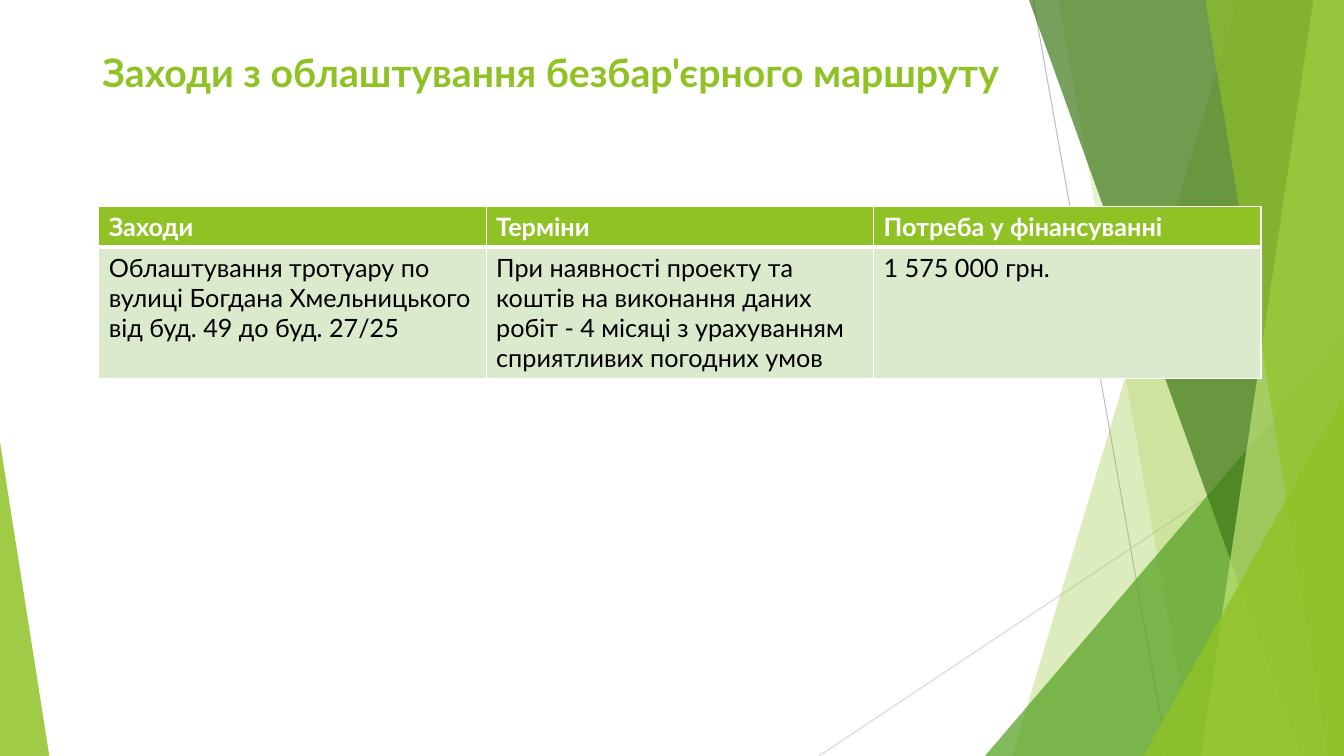
from dataclasses import dataclass

from lxml import etree
from pptx import Presentation
from pptx import util as u
from pptx.dml.color import RGBColor
from pptx.enum import shapes, text
from pptx.oxml.ns import qn

PX = 9525  # EMU in one px, 96 px to the inch
SLIDE_W, SLIDE_H = 1280, 720


@dataclass(frozen=True)
class Theme:
    font: str = "Lato"
    title_pt: int = 28
    table_pt: int = 18
    lime: str = "90C226"
    leaf: str = "54A021"
    forest: str = "3F7819"
    pale: str = "C0E474"
    body_fill: str = "DBE9CD"
    white: str = "FFFFFF"
    black: str = "000000"
    ray_dark: str = "BFBFBF"
    ray_light: str = "D9D9D9"
    ray_pt: float = 0.75
    border_pt: int = 1
    header_rule_pt: int = 3


THEME = Theme()


@dataclass(frozen=True)
class Ray:
    start: tuple[int, int]
    end: tuple[int, int]
    color: str


@dataclass(frozen=True)
class Panel:
    """Full-height panel with a slanted left edge, reaching the right side."""
    top_x: int
    bottom_x: int
    color: str
    opacity: int


@dataclass(frozen=True)
class Corner:
    """Right triangle on the bottom edge; tip is 0 for left, 1 for right."""
    left: int
    top: int
    width: int
    tip: int
    color: str
    opacity: int


RAYS = [
    Ray((984, 0), (1112, SLIDE_H), THEME.ray_dark),
    Ray((SLIDE_W, 387), (780, SLIDE_H), THEME.ray_light),
]
FACETS = [
    Panel(1179, 964, THEME.lime, 30),
    Panel(1008, 1136, THEME.lime, 20),
    Corner(938, 320, 342, 1, THEME.leaf, 72),
    Panel(980, 1239, THEME.forest, 70),
    Panel(1251, 1144, THEME.pale, 70),
    Panel(1148, 1265, THEME.lime, 65),
    Corner(1089, 377, 191, 1, THEME.lime, 80),
    Corner(0, 421, 47, 0, THEME.lime, 85),
]
TITLE = "Заходи з облаштування безбар'єрного маршруту"
MEASURES = [
    ["Заходи", "Терміни", "Потреба у фінансуванні"],
    [
        "Облаштування тротуару по вулиці Богдана Хмельницького від буд. 49 до буд. 27/25",
        "При наявності проекту та коштів на виконання даних робіт - 4 місяці "
        "з урахуванням сприятливих погодних умов",
        "1 575 000 грн.",
    ],
]
COLUMN_W = 369
ROW_HEIGHTS = [38, 125]


def px(*lengths: int) -> list[int]:
    return [u.Emu(length * PX) for length in lengths]


def write(frame, words: str, *, size: int, color: str, bold: bool = False) -> None:
    frame.word_wrap = True
    paragraph = frame.paragraphs[0]
    paragraph.alignment = text.PP_ALIGN.LEFT
    run = paragraph.add_run()
    run.text = words
    run.font.name = THEME.font
    run.font.size = u.Pt(size)
    run.font.bold = bold
    run.font.color.rgb = RGBColor.from_string(color)


def draw_ray(slide, ray: Ray) -> None:
    line = slide.shapes.add_connector(
        shapes.MSO_CONNECTOR.STRAIGHT, *px(*ray.start, *ray.end))
    line.line.color.rgb = RGBColor.from_string(ray.color)
    line.line.width = u.Pt(THEME.ray_pt)
    etree.SubElement(line._element.spPr, qn("a:effectLst"))


def draw_facet(slide, facet: Panel | Corner) -> None:
    if isinstance(facet, Panel):
        outline = slide.shapes.build_freeform(facet.top_x, 0, scale=PX)
        outline.add_line_segments(
            [(SLIDE_W, 0), (SLIDE_W, SLIDE_H), (facet.bottom_x, SLIDE_H)], close=True)
        shape = outline.convert_to_shape()
    else:
        shape = slide.shapes.add_shape(
            shapes.MSO_SHAPE.ISOSCELES_TRIANGLE,
            *px(facet.left, facet.top, facet.width, SLIDE_H - facet.top))
        shape.adjustments[0] = facet.tip
    shape.shadow.inherit = False
    shape.line.fill.background()
    shape.fill.solid()
    shape.fill.fore_color.rgb = RGBColor.from_string(facet.color)
    color = shape._element.spPr.find(".//" + qn("a:srgbClr"))
    etree.SubElement(color, qn("a:alpha"), val=str(facet.opacity * 1000))


def place_title(slide) -> None:
    title = slide.shapes.title
    title.left, title.top, title.width, title.height = px(88, 41, 1104, 139)
    title.text_frame.vertical_anchor = text.MSO_ANCHOR.TOP
    title.text_frame.auto_size = text.MSO_AUTO_SIZE.NONE
    write(title.text_frame, TITLE, size=THEME.title_pt, color=THEME.lime, bold=True)
    slide.shapes._spTree.append(title._element)  # in front of the facets


def border_cell(cell, *, top: float, bottom: float) -> None:
    widths = {"L": THEME.border_pt, "R": THEME.border_pt, "T": top, "B": bottom}
    properties = cell._tc.get_or_add_tcPr()
    for side, width in widths.items():
        line = etree.SubElement(properties, qn(f"a:ln{side}"), w=str(u.Pt(width)))
        fill = etree.SubElement(line, qn("a:solidFill"))
        etree.SubElement(fill, qn("a:srgbClr"), val=THEME.white)


def draw_measures(slide) -> None:
    columns = len(MEASURES[0])
    table = slide.shapes.add_table(
        len(MEASURES), columns,
        *px(94, 197, COLUMN_W * columns, sum(ROW_HEIGHTS))).table
    for row, height in zip(table.rows, ROW_HEIGHTS):
        row.height = u.Emu(height * PX)
    for r, measure in enumerate(MEASURES):
        header = r == 0
        for c, words in enumerate(measure):
            cell = table.cell(r, c)
            border_cell(
                cell,
                top=THEME.border_pt if header else THEME.header_rule_pt,
                bottom=THEME.header_rule_pt if header else THEME.border_pt)
            cell.fill.solid()
            cell.fill.fore_color.rgb = RGBColor.from_string(
                THEME.lime if header else THEME.body_fill)
            write(cell.text_frame, words, size=THEME.table_pt, bold=header,
                  color=THEME.white if header else THEME.black)


def main() -> None:
    deck = Presentation()
    deck.slide_width, deck.slide_height = px(SLIDE_W, SLIDE_H)
    slide = deck.slides.add_slide(deck.slide_layouts.get_by_name("Title Only"))

    # Background rays and facets
    for ray in RAYS:
        draw_ray(slide, ray)
    for facet in FACETS:
        draw_facet(slide, facet)

    # Content
    place_title(slide)
    draw_measures(slide)
    deck.save("out.pptx")


if __name__ == "__main__":
    main()
